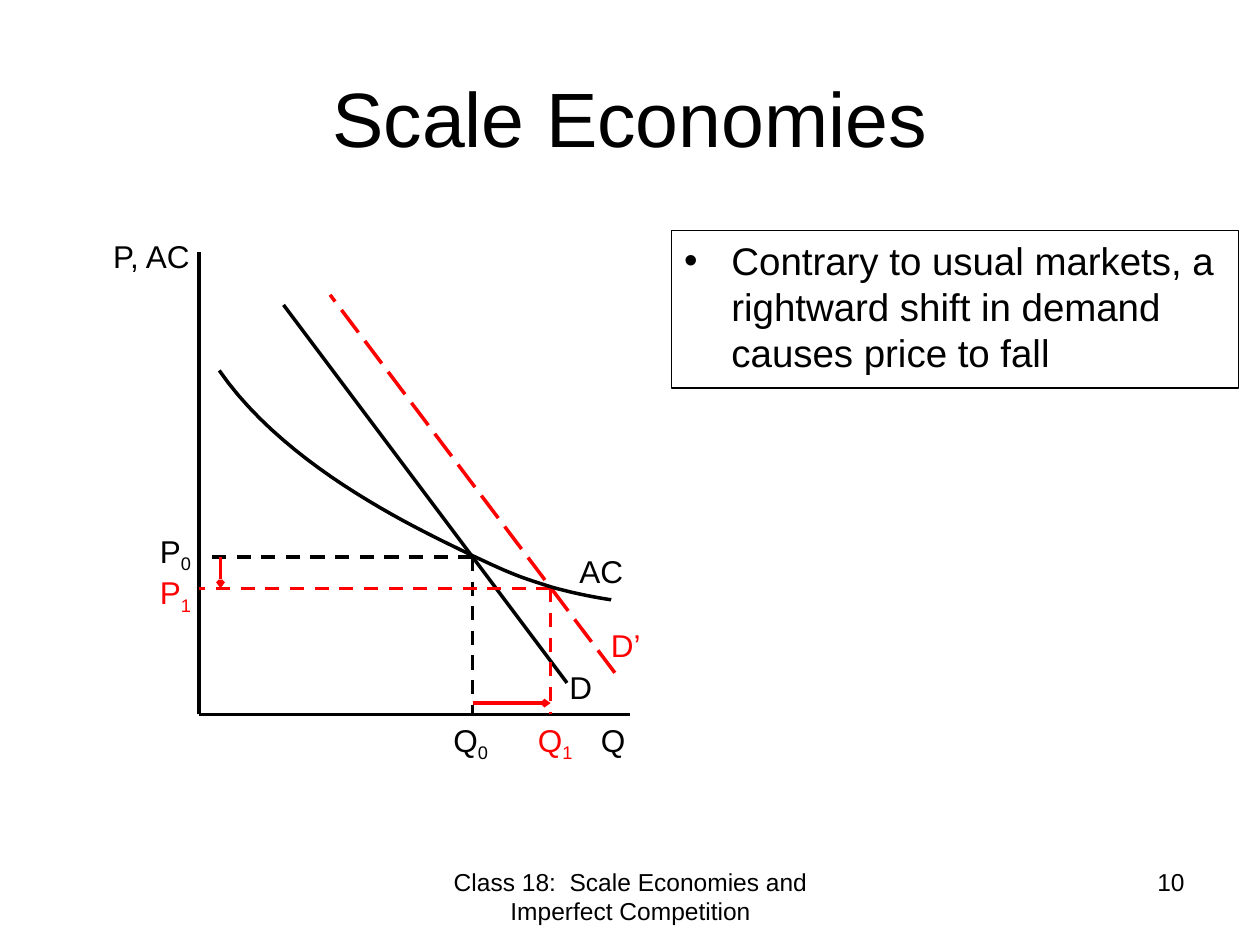
from dataclasses import dataclass

from lxml import etree
from pptx import Presentation
from pptx.dml.color import RGBColor
from pptx.enum.dml import MSO_LINE
from pptx.enum.shapes import MSO_CONNECTOR
from pptx.enum.text import MSO_ANCHOR, MSO_AUTO_SIZE, PP_ALIGN
from pptx.oxml.ns import qn
from pptx.util import Inches, Pt

STRAIGHT = MSO_CONNECTOR.STRAIGHT
DASH = MSO_LINE.DASH
LONG_DASH = MSO_LINE.LONG_DASH
MIDDLE = MSO_ANCHOR.MIDDLE
NO_FIT = MSO_AUTO_SIZE.NONE
LEFT, CENTER, RIGHT = PP_ALIGN.LEFT, PP_ALIGN.CENTER, PP_ALIGN.RIGHT

FONT = "Arial"
BLACK, RED = "000000", "FF0000"

AXIS_LEFT, AXIS_TOP, AXIS_BOTTOM, AXIS_RIGHT = 1.58, 2.0, 5.67, 5.0
QUANTITY_0, PRICE_0 = 3.75, 4.42
QUANTITY_1, PRICE_1 = 4.37, 4.67
CURVE_STEPS = 24

Point = tuple[float, float]


@dataclass
class Segment:
    start: Point
    end: Point
    color: str = BLACK
    dash: MSO_LINE | None = None
    arrow: bool = False


@dataclass
class Label:
    text: str
    left: float
    top: float
    color: str = BLACK
    subscript: str = ""
    width: float = 0.58
    height: float = 0.4
    size: int = 18
    align: PP_ALIGN = LEFT


SEGMENTS = [
    Segment((AXIS_LEFT, AXIS_BOTTOM), (AXIS_RIGHT, AXIS_BOTTOM)),
    Segment((AXIS_LEFT, AXIS_BOTTOM), (AXIS_LEFT, AXIS_TOP)),
    Segment((4.5, 5.42), (2.25, 2.42)),
    Segment((QUANTITY_0, PRICE_0), (AXIS_LEFT, PRICE_0), dash=DASH),
    Segment((QUANTITY_0, PRICE_0), (QUANTITY_0, AXIS_BOTTOM), dash=DASH),
    Segment((QUANTITY_1, PRICE_1), (QUANTITY_1, AXIS_BOTTOM), RED, DASH),
    Segment((QUANTITY_1, PRICE_1), (AXIS_LEFT, PRICE_1), RED, DASH),
    Segment((QUANTITY_0, 5.58), (QUANTITY_1, 5.58), RED, arrow=True),
    Segment((4.88, 5.34), (2.62, 2.34), RED, LONG_DASH),
    Segment((1.75, PRICE_0), (1.75, PRICE_1), RED, arrow=True),
]

LABELS = [
    Label("P, AC", 0.8, 1.83, width=1.12),
    Label("Q", 4.67, AXIS_BOTTOM),
    Label("Q", 3.5, AXIS_BOTTOM, subscript="0"),
    Label("Q", 4.17, AXIS_BOTTOM, RED, "1"),
    Label("P", 1.17, 4.17, subscript="0"),
    Label("P", 1.17, 4.5, RED, "1"),
    Label("D", 4.42, 5.25),
    Label("D’", 4.75, 4.92, RED, width=0.5),
    Label("AC", 4.5, 4.33),
    Label("Class 18:  Scale Economies and Imperfect Competition", 3.42, 6.83,
          width=3.17, height=0.52, size=14, align=CENTER),
    Label("10", 7.17, 6.83, width=2.33, height=0.52, size=14, align=RIGHT),
]

COST_START = (1.74, 2.94)
COST_CURVES = [
    ((2.3, 3.75), (3.41, 4.24), (3.75, 4.41)),
    ((4.09, 4.57), (4.13, 4.58), (4.38, 4.66)),
    ((4.63, 4.73), (4.85, 4.76), (4.85, 4.76)),
]


def rgb(color: str) -> RGBColor:
    return RGBColor.from_string(color)


def place(shape, left: float, top: float, width: float, height: float) -> None:
    shape.left, shape.top = Inches(left), Inches(top)
    shape.width, shape.height = Inches(width), Inches(height)


def format_text(frame, size: int, color: str = BLACK) -> None:
    for para in frame.paragraphs:
        for span in para.runs:
            span.font.name = FONT
            span.font.size = Pt(size)
            span.font.color.rgb = rgb(color)


def format_line(line, color: str, width: float = 2) -> None:
    line.color.rgb = rgb(color)
    line.width = Pt(width)


def draw_segment(page, segment: Segment) -> None:
    ends = [Inches(value) for value in segment.start + segment.end]
    connector = page.shapes.add_connector(STRAIGHT, *ends)
    format_line(connector.line, segment.color)
    if segment.dash is not None:
        connector.line.dash_style = segment.dash
    properties = connector._element.spPr
    if segment.arrow:
        tail = etree.SubElement(properties.find(qn("a:ln")), qn("a:tailEnd"))
        for name, value in (("type", "arrow"), ("w", "sm"), ("len", "sm")):
            tail.set(name, value)
    etree.SubElement(properties, qn("a:effectLst"))


def draw_label(page, label: Label) -> None:
    box = page.shapes.add_textbox(
        Inches(label.left), Inches(label.top), Inches(label.width), Inches(label.height))
    frame = box.text_frame
    frame.word_wrap = True
    frame.text = label.text
    para = frame.paragraphs[0]
    para.alignment = label.align
    if label.subscript:
        span = para.add_run()
        span.text = label.subscript
        span.font._element.set("baseline", "-25000")
    format_text(frame, label.size, label.color)


def bezier(start: Point, first: Point, second: Point, end: Point) -> list[Point]:
    points = []
    for step in range(1, CURVE_STEPS + 1):
        t = step / CURVE_STEPS
        u = 1 - t
        weights = (u ** 3, 3 * u * u * t, 3 * u * t * t, t ** 3)
        controls = (start, first, second, end)
        points.append(tuple(sum(weight * control[axis] for weight, control
                                in zip(weights, controls)) for axis in (0, 1)))
    return points


def draw_cost_curve(page) -> None:
    points = [COST_START]
    for first, second, end in COST_CURVES:
        points += bezier(points[-1], first, second, end)
    vertices = [(Inches(x), Inches(y)) for x, y in points]
    builder = page.shapes.build_freeform(*vertices[0])
    builder.add_line_segments(vertices[1:], close=False)
    curve = builder.convert_to_shape()
    curve.shadow.inherit = False
    curve.fill.background()
    format_line(curve.line, BLACK)


def fill_placeholders(page) -> None:
    title, body = page.shapes.title, page.placeholders[1]
    place(title, 0.5, 0.3, 9, 1.25)
    title.text_frame.text = "Scale Economies"
    title.text_frame.vertical_anchor = MIDDLE
    format_text(title.text_frame, 44)

    place(body, 5.33, 1.83, 4.5, 1.25)
    format_line(body.line, BLACK, 0.75)
    frame = body.text_frame
    frame.text = "Contrary to usual markets, a rightward shift in demand causes price to fall"
    frame.auto_size = NO_FIT
    format_text(frame, 22)


def main() -> None:
    deck = Presentation()
    deck.slide_width, deck.slide_height = Inches(10), Inches(7.5)
    page = deck.slides.add_slide(deck.slide_layouts[1])
    fill_placeholders(page)
    for segment in SEGMENTS:
        draw_segment(page, segment)
    draw_cost_curve(page)
    for label in LABELS:
        draw_label(page, label)
    deck.save("out.pptx")


if __name__ == "__main__":
    main()
